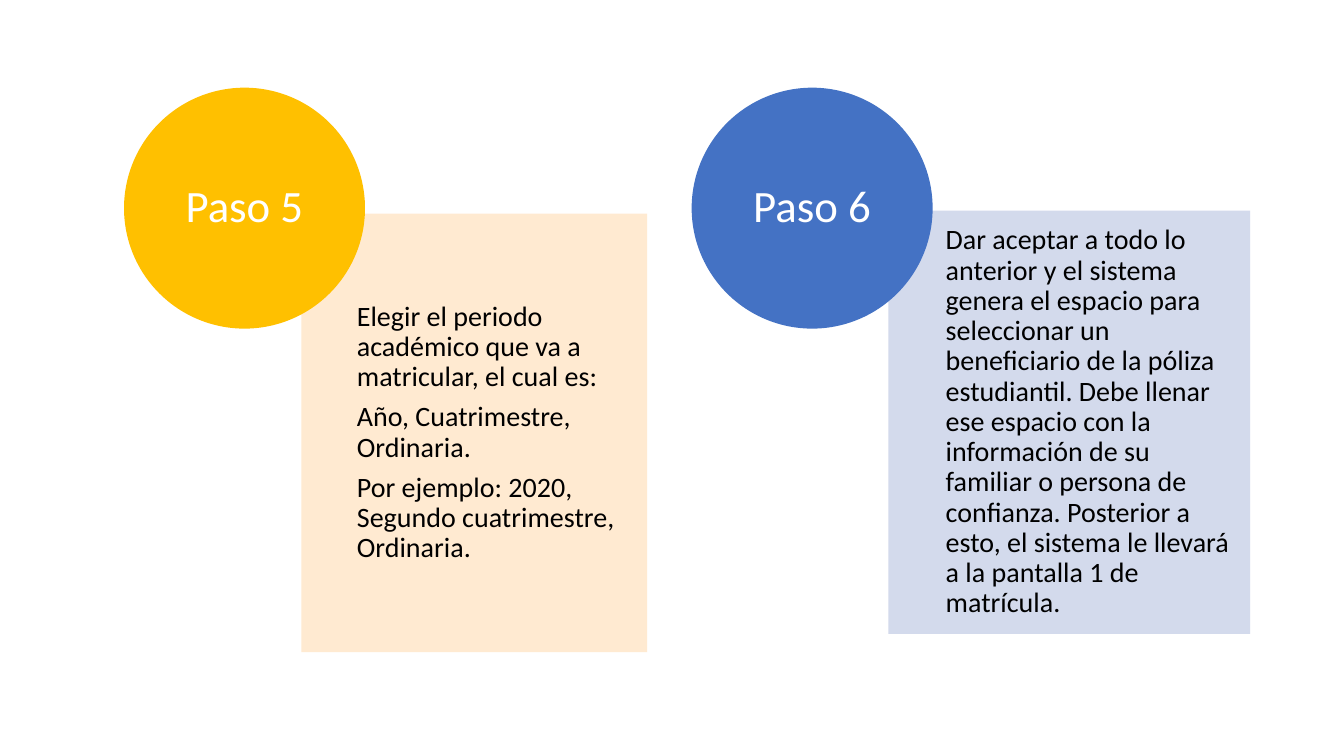
from lxml.etree import SubElement
from pptx import Presentation
from pptx.dml.color import RGBColor
from pptx.enum.shapes import MSO_SHAPE
from pptx.enum.text import MSO_ANCHOR, PP_ALIGN
from pptx.oxml.ns import qn
from pptx.util import Inches, Pt

CIRCLE_TOP = 0.87
CIRCLE_SIZE = 2.39
PADDING = 0.16

STEPS = [
    {
        "title": "Paso 5",
        "circle_left": 1.23,
        "circle_color": "FFC000",
        "panel": (2.99, 2.12, 3.43, 4.35),
        "panel_color": "FFE8CC",
        "indent": 0.55,
        "lines": [
            "Elegir el periodo académico que va a matricular, el cual es:",
            "Año, Cuatrimestre, Ordinaria.",
            "Por ejemplo: 2020, Segundo cuatrimestre, Ordinaria.",
        ],
    },
    {
        "title": "Paso 6",
        "circle_left": 6.86,
        "circle_color": "4472C4",
        "panel": (8.81, 2.09, 3.59, 4.2),
        "panel_color": "CFD6EA",
        "indent": 0.57,
        "lines": [
            "Dar aceptar a todo lo anterior y el sistema genera el espacio para "
            "seleccionar un beneficiario de la póliza estudiantil. Debe llenar "
            "ese espacio con la información de su familiar o persona de "
            "confianza. Posterior a esto, el sistema le llevará a la pantalla 1 "
            "de matrícula.",
        ],
    },
]


def color(value):
    return RGBColor.from_string(value)


def add_filled_shape(page, kind, bounds, fill, opacity=100):
    """Add a borderless shape; bounds are inches, opacity is a percentage."""
    shape = page.shapes.add_shape(kind, *(Inches(length) for length in bounds))
    shape.shadow.inherit = False
    shape.fill.solid()
    shape.fill.fore_color.rgb = color(fill)
    shape.line.fill.background()
    if opacity < 100:
        tint = shape.fill._xPr.find(qn("a:solidFill"))[0]
        SubElement(tint, qn("a:alpha"), val=str(opacity * 1000))
    return shape


def write_text(shape, lines, size, font_color, align=PP_ALIGN.LEFT, insets=(0, 0, 0, 0)):
    """Write one paragraph per line; insets are left, top, right, bottom."""
    frame = shape.text_frame
    frame.word_wrap = True
    frame.vertical_anchor = MSO_ANCHOR.MIDDLE
    (frame.margin_left, frame.margin_top,
     frame.margin_right, frame.margin_bottom) = (Inches(inset) for inset in insets)
    for index, line in enumerate(lines):
        para = frame.add_paragraph() if index else frame.paragraphs[0]
        para.alignment = align
        para.line_spacing = 0.9
        para.space_after = Pt(round(size * 0.35))
        span = para.add_run()
        span.text = line
        span.font.name = "Calibri"
        span.font.size = Pt(size)
        span.font.color.rgb = color(font_color)


def add_step(page, step):
    panel = add_filled_shape(page, MSO_SHAPE.RECTANGLE, step["panel"],
                             step["panel_color"], opacity=90)
    write_text(panel, step["lines"], size=20, font_color="000000",
               insets=(step["indent"], PADDING, PADDING, PADDING))
    circle = add_filled_shape(
        page, MSO_SHAPE.OVAL,
        (step["circle_left"], CIRCLE_TOP, CIRCLE_SIZE, CIRCLE_SIZE),
        step["circle_color"])
    write_text(circle, [step["title"]], size=32, font_color="FFFFFF",
               align=PP_ALIGN.CENTER)


def main():
    deck = Presentation()
    deck.slide_width = Inches(13.33)
    deck.slide_height = Inches(7.5)
    page = deck.slides.add_slide(deck.slide_layouts[6])
    for step in STEPS:
        add_step(page, step)
    deck.save("out.pptx")


if __name__ == "__main__":
    main()
